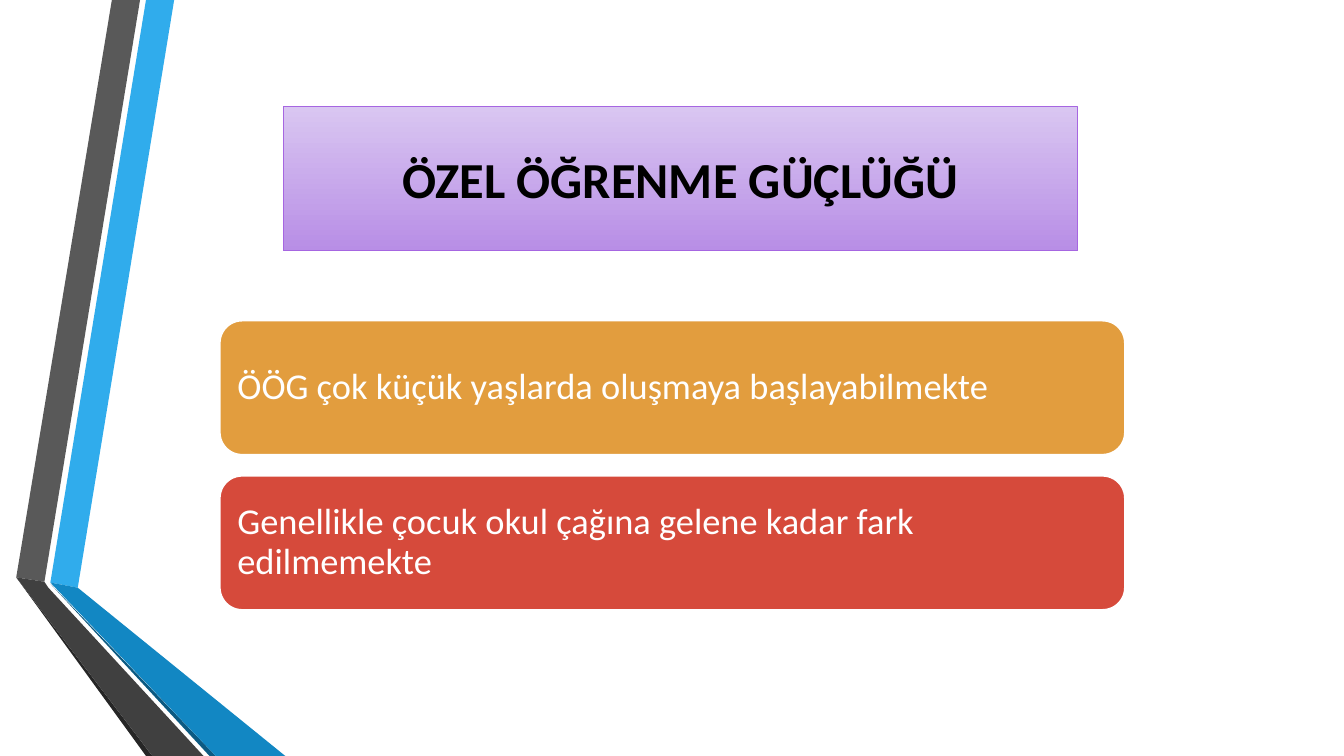
import pptx
import pptx.dml.color
import pptx.enum.shapes
import pptx.enum.text
import pptx.util

Cm = pptx.util.Cm
Pt = pptx.util.Pt
ALIGN = pptx.enum.text.PP_ALIGN

COLORS = {
    "sky": "30ACEC", "blue": "1287C3", "navy": "0C5A82",
    "gray": "595959", "charcoal": "404040", "black_gray": "262626",
    "orange": "E29D3E", "red": "D64A3B", "white": "FFFFFF", "black": "000000",
    "lilac": "D9C6F1", "violet": "B88EE6", "purple": "A666E1",
}


def color(name):
    return pptx.dml.color.RGBColor.from_string(COLORS[name])


def write_text(shape, text, align, line_spacing, font_format):
    """Put one vertically centred paragraph in the shape."""
    frame = shape.text_frame
    frame.word_wrap = True
    frame.auto_size = pptx.enum.text.MSO_AUTO_SIZE.NONE
    frame.vertical_anchor = pptx.enum.text.MSO_ANCHOR.MIDDLE
    paragraph = frame.paragraphs[0]
    paragraph.alignment = align
    paragraph.line_spacing = line_spacing
    run = paragraph.add_run()
    run.text = text
    run.font.color.rgb = color(font_format["color"])
    for attribute in ("name", "size", "bold"):
        setattr(run.font, attribute, font_format[attribute])


presentation = pptx.Presentation()
presentation.slide_width = Cm(33.87)
presentation.slide_height = Cm(19.05)
slide = presentation.slides.add_slide(presentation.slide_layouts[5])

# Folded ribbons along the left edge, points in centimetres
ribbons = [
    ("sky", [(1.27, 14.68), (1.96, 14.81), (4.39, 0), (3.68, 0)]),
    ("gray", [(3.53, 0), (2.82, 0), (0.41, 14.55), (1.12, 14.66)]),
    ("black_gray", [(0.41, 14.55), (3.68, 19.05), (3.84, 19.05)]),
    ("navy", [(1.27, 14.71), (5.28, 19.05), (5.44, 19.05)]),
    ("blue", [(1.27, 14.68), (5.44, 19.05), (7.19, 19.05), (1.96, 14.81)]),
    ("charcoal", [(5.13, 19.05), (1.22, 14.81), (1.12, 14.66), (0.41, 14.55), (3.84, 19.05)]),
]
for fill_name, points in ribbons:
    corners = [(Cm(x), Cm(y)) for x, y in points]
    builder = slide.shapes.build_freeform(*corners[0])
    builder.add_line_segments(corners[1:], close=True)
    ribbon = builder.convert_to_shape()
    ribbon.shadow.inherit = False
    ribbon.fill.solid()
    ribbon.fill.fore_color.rgb = color(fill_name)
    ribbon.line.fill.background()

# Statement boxes
statements = [
    ("orange", "ÖÖG çok küçük yaşlarda oluşmaya başlayabilmekte"),
    ("red", "Genellikle çocuk okul çağına gelene kadar fark edilmemekte"),
]
statement_font = {"name": "Calibri", "size": Pt(26), "bold": False, "color": "white"}
for index, (fill_name, text) in enumerate(statements):
    box = slide.shapes.add_shape(
        pptx.enum.shapes.MSO_SHAPE.ROUNDED_RECTANGLE,
        Cm(5.54), Cm(8.08 + 3.91 * index), Cm(22.81), Cm(3.38))
    box.shadow.inherit = False
    box.fill.solid()
    box.fill.fore_color.rgb = color(fill_name)
    box.line.color.rgb = color("white")
    box.line.width = Pt(1.25)
    for side in ("left", "top", "right", "bottom"):
        setattr(box.text_frame, f"margin_{side}", Cm(0.28))
    write_text(box, text, ALIGN.LEFT, 0.9, statement_font)

# Title
title = slide.shapes.title
title_place = {"left": Cm(7.14), "top": Cm(2.69), "width": Cm(20.02), "height": Cm(3.63)}
for attribute, value in title_place.items():
    setattr(title, attribute, value)
title.fill.gradient()
title.fill.gradient_angle = 270
for stop, name, position in zip(title.fill.gradient_stops, ("lilac", "violet"), (0, 1)):
    stop.color.rgb = color(name)
    stop.position = position
title.line.color.rgb = color("purple")
title.line.width = Pt(0.75)
title_font = {"name": "Calibri", "size": Pt(36), "bold": True, "color": "black"}
write_text(title, "ÖZEL ÖĞRENME GÜÇLÜĞÜ", ALIGN.CENTER, 1.0, title_font)

presentation.save("out.pptx")
